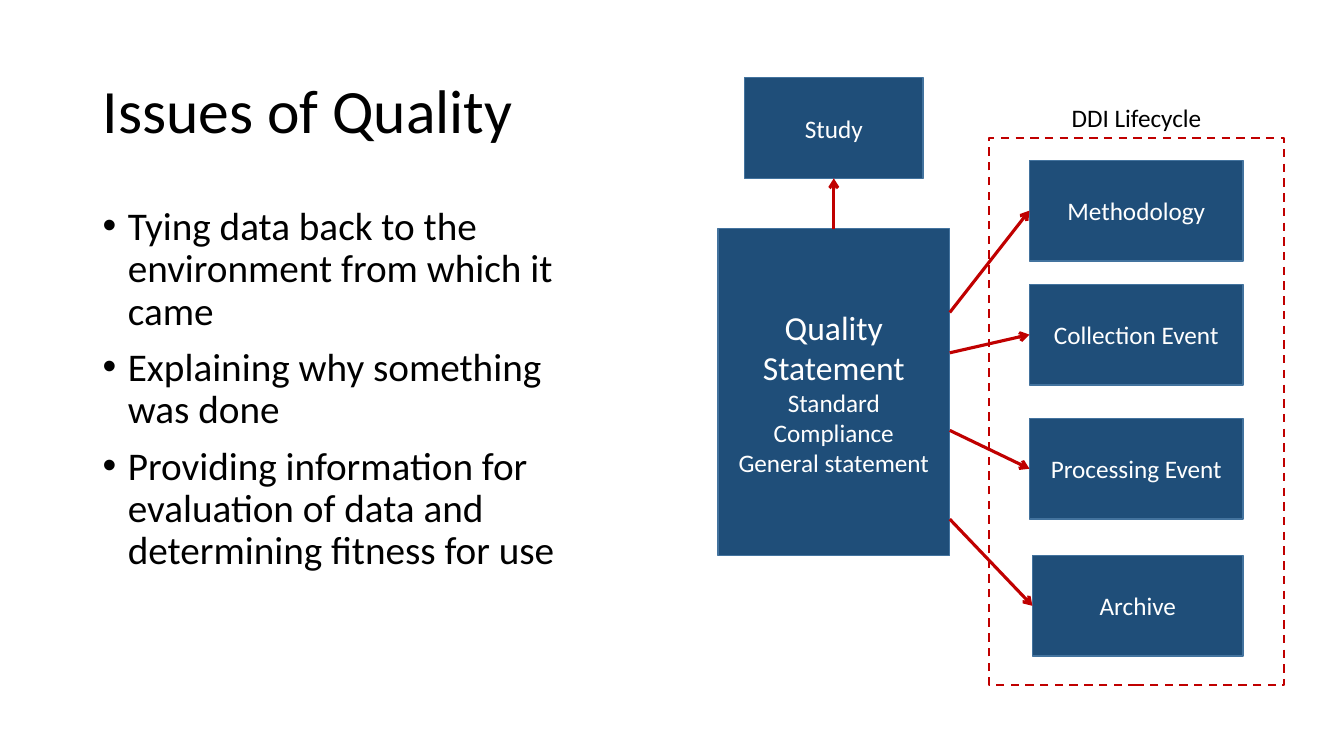
from lxml import etree
from pptx import Presentation, util as u
from pptx.dml.color import RGBColor
from pptx.enum import dml, shapes, text
from pptx.oxml import ns

NAVY, EDGE, RED, WHITE, BLACK = "1F4E79", "43739E", "C00000", "FFFFFF", "000000"


def paint(color_format, code):
    color_format.rgb = RGBColor.from_string(code)


def write(box, lines, color, anchor=text.MSO_ANCHOR.MIDDLE, align=None):
    """Fill a box with (wording, size) lines and return its paragraphs."""
    frame = box.text_frame
    frame.word_wrap = True
    frame.vertical_anchor = anchor
    frame.text = "\n".join(wording for wording, size in lines)
    for para, (wording, size) in zip(frame.paragraphs, lines):
        para.alignment = align
        para.font.name = "Calibri"
        para.font.size = u.Pt(size)
        paint(para.font.color, color)
    return frame.paragraphs


deck = Presentation()
deck.slide_width, deck.slide_height = u.Inches(13.33), u.Inches(7.5)
page = deck.slides.add_slide(deck.slide_layouts[6])

# Title and bullets
left = 0.92
title = page.shapes.add_textbox(*map(u.Inches, (left, 0.4, 11.5, 1.45)))
write(title, [("Issues of Quality", 44)], BLACK)[0].line_spacing = 0.9

points = [
    "Tying data back to the environment from which it came",
    "Explaining why something was done",
    "Providing information for evaluation of data and determining fitness for use",
]
body = page.shapes.add_textbox(*map(u.Inches, (left, 2, 5.15, 4.76)))
for para in write(body, [(point, 28) for point in points], BLACK, text.MSO_ANCHOR.TOP):
    para.line_spacing = 0.9
    para.space_before = u.Pt(10)
    props = para._p.get_or_add_pPr()
    props.set("marL", str(u.Inches(0.25)))
    props.set("indent", str(u.Inches(-0.25)))
    etree.SubElement(props, ns.qn("a:buFont")).set("typeface", "Arial")
    etree.SubElement(props, ns.qn("a:buChar")).set("char", "•")

# Boxes: left, top, width, height, lines
box_height = 1
statement_left, statement_top, statement_width = 7.12, 2.27, 2.3
statement_right = statement_left + statement_width
statement_middle = statement_left + statement_width / 2
study_top, study_width = 0.77, 1.77
lifecycle_right = 12.33
# Name, left, top, height where its arrow leaves the statement
lifecycle = [
    ("Methodology", 10.21, 1.59, 3.1),
    ("Collection Event", 10.21, 2.82, 3.5),
    ("Processing Event", 10.21, 4.15, 4.27),
    ("Archive", 10.24, 5.51, 5.15),
]
statement_lines = [("Quality Statement", 24), ("Standard", 18), ("Compliance", 18),
                   ("General statement", 18)]
boxes = [
    (statement_left, statement_top, statement_width, 3.24, statement_lines),
    (statement_middle - study_width / 2, study_top, study_width, box_height, [("Study", 18)]),
]
arrows = [(statement_middle, statement_top, statement_middle, study_top + box_height)]
for name, x, y, start in lifecycle:
    boxes.append((x, y, lifecycle_right - x, box_height, [(name, 18)]))
    arrows.append((statement_right, start, x, y + box_height / 2))

for *place, lines in boxes:
    box = page.shapes.add_shape(shapes.MSO_SHAPE.RECTANGLE, *map(u.Inches, place))
    box.shadow.inherit = False
    box.fill.solid()
    paint(box.fill.fore_color, NAVY)
    paint(box.line.color, EDGE)
    box.line.width = u.Pt(1)
    write(box, lines, WHITE, align=text.PP_ALIGN.CENTER)

for ends in arrows:
    arrow = page.shapes.add_connector(shapes.MSO_CONNECTOR.STRAIGHT, *map(u.Inches, ends))
    paint(arrow.line.color, RED)
    arrow.line.width = u.Pt(2.25)
    etree.SubElement(arrow.line._get_or_add_ln(), ns.qn("a:tailEnd")).set("type", "arrow")
    etree.SubElement(arrow._element.spPr, ns.qn("a:effectLst"))

# Dashed frame and its label
frame = page.shapes.add_shape(shapes.MSO_SHAPE.RECTANGLE, *map(u.Inches, (9.81, 1.37, 2.93, 5.43)))
frame.shadow.inherit = False
frame.fill.background()
paint(frame.line.color, RED)
frame.line.width = u.Pt(1.5)
frame.line.dash_style = dml.MSO_LINE.DASH

label = page.shapes.add_textbox(*map(u.Inches, (10.53, 0.97, 1.51, 0.4)))
write(label, [("DDI Lifecycle", 18)], BLACK, text.MSO_ANCHOR.TOP)
label.text_frame.word_wrap = False
label.text_frame.auto_size = text.MSO_AUTO_SIZE.SHAPE_TO_FIT_TEXT

deck.save("out.pptx")
